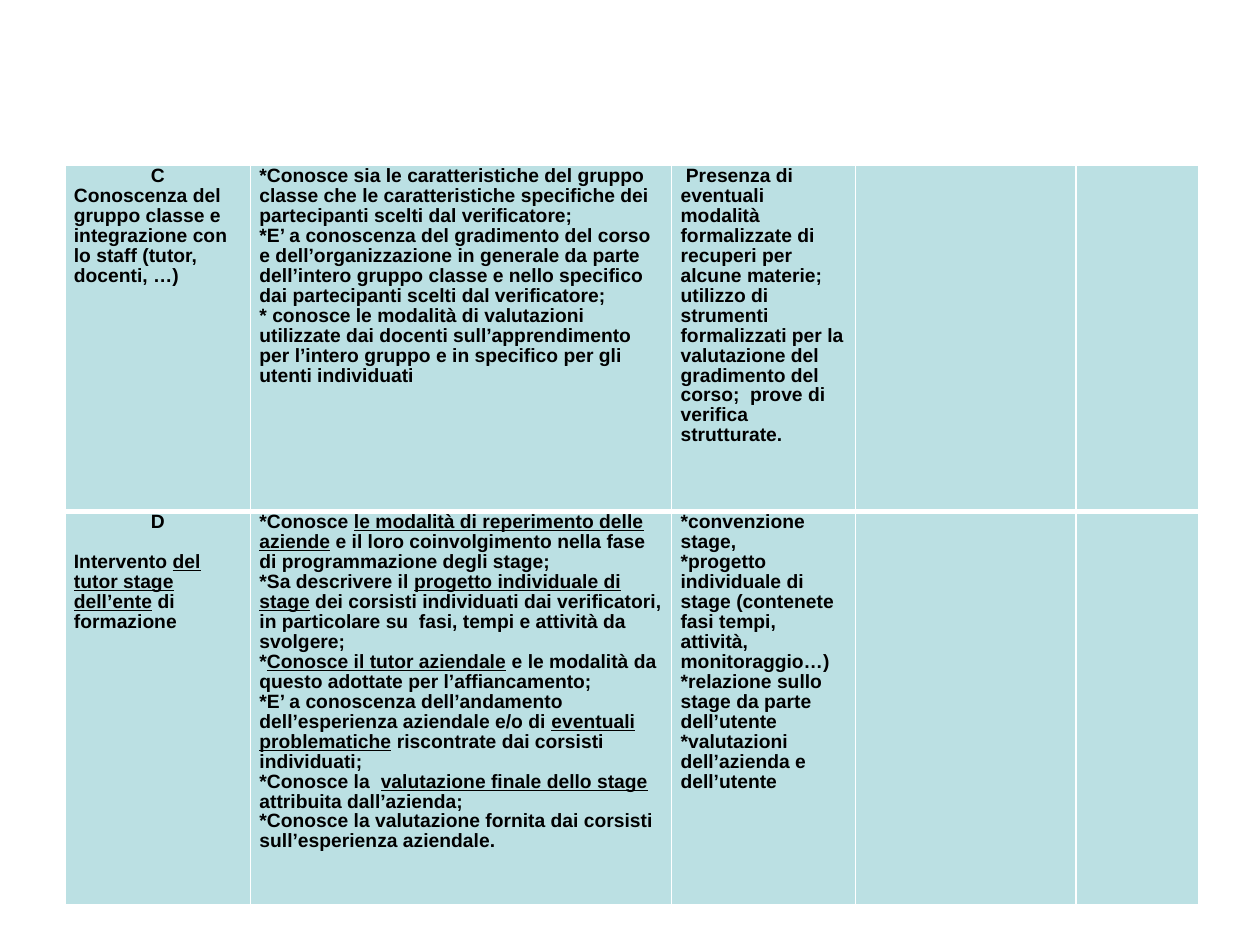
from dataclasses import dataclass

from lxml.etree import SubElement
from pptx import Presentation
from pptx.dml.color import RGBColor
from pptx.enum.text import PP_ALIGN
from pptx.oxml.ns import qn
from pptx.util import Cm, Pt

COLUMN_WIDTHS = [3.74, 8.49, 3.7, 4.45, 2.47]
ROW_HEIGHTS = [6.98, 7.92]
CELL_FILL = "BBE0E3"
BORDER = "FFFFFF"
INK = "000000"
THIN, THICK = 0.91, 2.95


@dataclass(frozen=True)
class Span:
    text: str
    underline: bool = False


@dataclass(frozen=True)
class Para:
    spans: tuple[Span, ...]
    centred: bool = False
    space_before: float = 0


def plain(text: str) -> Para:
    return Para((Span(text),))


def heading(letter: str) -> Para:
    return Para((Span(letter),), centred=True)


def marked(before: str, underlined: str, after: str, space_before: float = 0) -> Para:
    spans = (Span(before), Span(underlined, True), Span(after))
    return Para(spans, space_before=space_before)


ROWS = [
    [
        [
            heading("C"),
            plain("Conoscenza del gruppo classe e integrazione con lo staff (tutor, docenti, …)"),
        ],
        [
            plain("*Conosce sia le caratteristiche del gruppo classe che le caratteristiche "
                  "specifiche dei partecipanti scelti dal verificatore;"),
            plain("*E’ a conoscenza del gradimento del corso e dell’organizzazione in generale "
                  "da parte dell’intero gruppo classe e nello specifico dai partecipanti scelti "
                  "dal verificatore;"),
            plain("* conosce le modalità di valutazioni utilizzate dai docenti "
                  "sull’apprendimento per l’intero gruppo e in specifico per gli utenti individuati"),
        ],
        [
            plain(" Presenza di eventuali modalità formalizzate di recuperi per alcune materie;  "
                  "utilizzo di strumenti formalizzati per la valutazione del gradimento del "
                  "corso;  prove di verifica strutturate."),
        ],
        [],
        [],
    ],
    [
        [
            heading("D"),
            marked("Intervento ", "del tutor stage dell’ente", " di formazione", space_before=11.4),
        ],
        [
            marked("*Conosce ", "le modalità di reperimento delle aziende",
                   " e il loro coinvolgimento nella fase di programmazione degli stage;"),
            marked("*Sa descrivere il ", "progetto individuale di stage",
                   " dei corsisti individuati dai verificatori, in particolare su  fasi, "
                   "tempi e attività da svolgere;"),
            marked("*", "Conosce il tutor aziendale",
                   " e le modalità da questo adottate per l’affiancamento;"),
            marked("*E’ a conoscenza dell’andamento dell’esperienza aziendale e/o di ",
                   "eventuali problematiche", " riscontrate dai corsisti individuati;"),
            marked("*Conosce la  ", "valutazione finale dello stage",
                   " attribuita dall’azienda;"),
            plain("*Conosce la valutazione fornita dai corsisti sull’esperienza aziendale."),
        ],
        [
            plain("*convenzione stage,"),
            plain("*progetto individuale di stage (contenete fasi tempi, attività, monitoraggio…)"),
            plain("*relazione sullo stage da parte dell’utente"),
            plain("*valutazioni dell’azienda e dell’utente"),
        ],
        [],
        [],
    ],
]


def colour(value: str) -> RGBColor:
    return RGBColor.from_string(value)


def add_border(cell, side: str, width: float) -> None:
    properties = cell._tc.get_or_add_tcPr()
    line = SubElement(properties, qn(f"a:ln{side}"), w=str(int(Pt(width))))
    fill = SubElement(line, qn("a:solidFill"))
    SubElement(fill, qn("a:srgbClr"), val=BORDER)


def style_cell(cell, top: float, bottom: float) -> None:
    cell.margin_left = cell.margin_right = Cm(0.18)
    cell.margin_top = Cm(0.03)
    cell.margin_bottom = Cm(0)
    for side, width in {"L": THIN, "R": THIN, "T": top, "B": bottom}.items():
        add_border(cell, side, width)
    cell.fill.solid()
    cell.fill.fore_color.rgb = colour(CELL_FILL)


def write_cell(cell, paras: list[Para]) -> None:
    frame = cell.text_frame
    for index, para in enumerate(paras):
        paragraph = frame.add_paragraph() if index else frame.paragraphs[0]
        paragraph.alignment = PP_ALIGN.CENTER if para.centred else PP_ALIGN.LEFT
        paragraph.line_spacing = 0.93
        if para.space_before:
            paragraph.space_before = Pt(para.space_before)
        for span in para.spans:
            run = paragraph.add_run()
            run.text = span.text
            run.font.name = "Arial"
            run.font.size = Pt(11)
            run.font.bold = True
            run.font.underline = span.underline
            run.font.color.rgb = colour(INK)


def add_criteria_table(page) -> None:
    box = page.shapes.add_table(
        len(ROW_HEIGHTS), len(COLUMN_WIDTHS), Cm(1.31), Cm(3.33),
        Cm(sum(COLUMN_WIDTHS)), Cm(sum(ROW_HEIGHTS)),
    )
    table = box.table
    table.first_row = table.horz_banding = False
    for column, width in zip(table.columns, COLUMN_WIDTHS):
        column.width = Cm(width)
    for row, height in zip(table.rows, ROW_HEIGHTS):
        row.height = Cm(height)
    for row_index, contents in enumerate(ROWS):
        top = THICK if row_index else THIN
        bottom = THICK if row_index < len(ROWS) - 1 else THIN
        for column_index, paras in enumerate(contents):
            cell = table.cell(row_index, column_index)
            style_cell(cell, top, bottom)
            write_cell(cell, paras)


def main() -> None:
    deck = Presentation()
    deck.slide_width, deck.slide_height = Cm(25.4), Cm(19.05)
    page = deck.slides.add_slide(deck.slide_layouts[6])
    add_criteria_table(page)
    deck.save("out.pptx")


if __name__ == "__main__":
    main()
